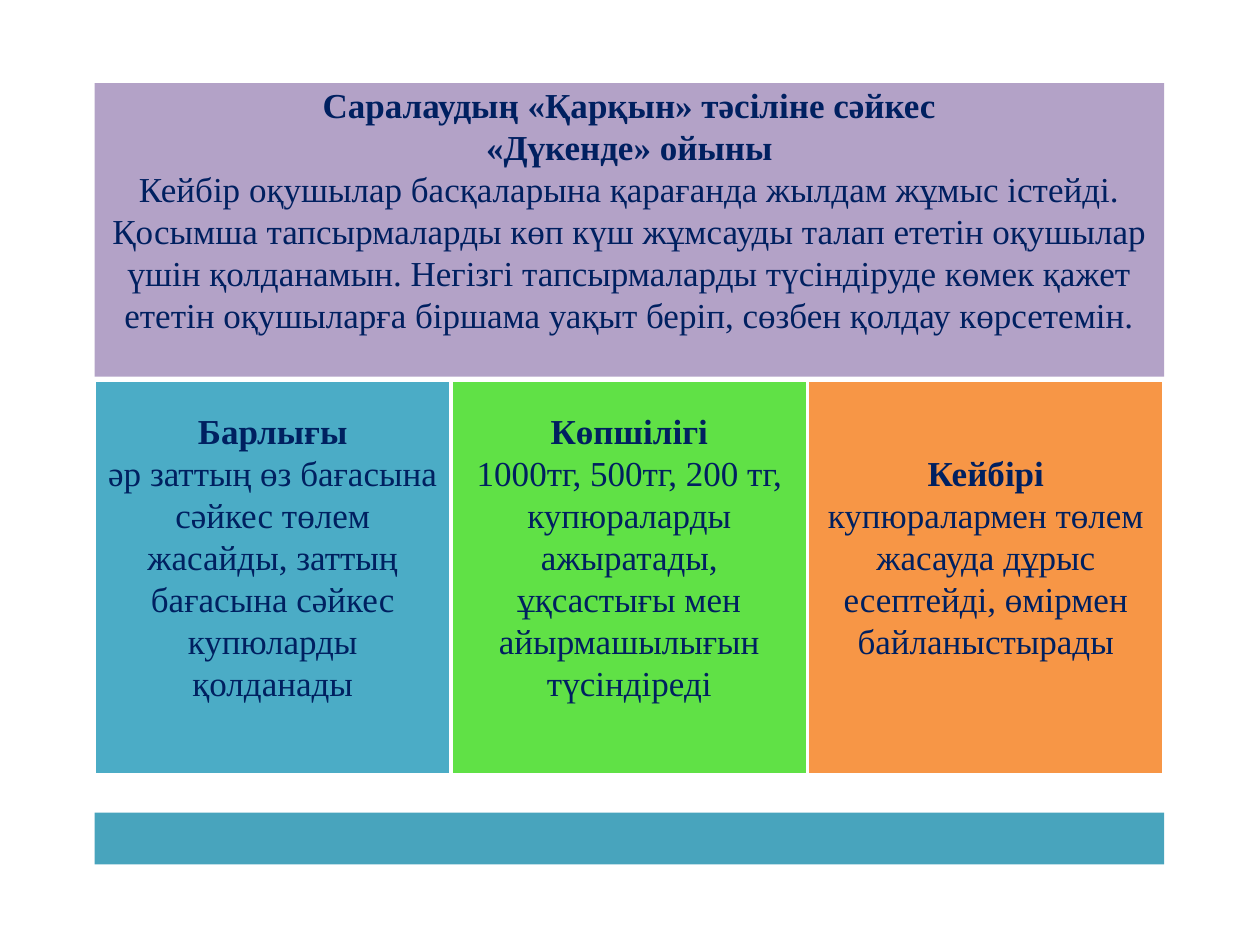
"""Build the slide on a differentiation method: a header panel, three pupil groups and a base bar."""
from dataclasses import dataclass

from pptx import Presentation
from pptx.dml.color import RGBColor
from pptx.enum.shapes import MSO_SHAPE
from pptx.enum.text import MSO_ANCHOR, MSO_AUTO_SIZE, PP_ALIGN
from pptx.util import Inches, Pt

HEADINGS = ["Саралаудың «Қарқын» тәсіліне сәйкес", "«Дүкенде» ойыны"]
EXPLANATION = (
    "Кейбір оқушылар басқаларына қарағанда жылдам жұмыс істейді. "
    "Қосымша тапсырмаларды көп күш жұмсауды талап ететін оқушылар үшін қолданамын. "
    "Негізгі тапсырмаларды түсіндіруде көмек қажет ететін оқушыларға біршама уақыт беріп, "
    "сөзбен қолдау көрсетемін."
)
GROUPS = [
    ("Барлығы", "әр заттың өз бағасына сәйкес төлем жасайды, "
     "заттың бағасына сәйкес купюларды қолданады", "4BACC6"),
    ("Көпшілігі", "1000тг, 500тг, 200 тг, купюраларды ажыратады, "
     "ұқсастығы мен айырмашылығын түсіндіреді", "60E146"),
    ("Кейбірі", "купюралармен төлем жасауда дұрыс есептейді, "
     "өмірмен байланыстырады", "F79646"),
]


@dataclass(frozen=True)
class Theme:
    font: str = "Times New Roman"
    size: int = 20
    ink: str = "002060"
    header: str = "B3A2C7"
    base: str = "48A4BD"
    border: str = "FFFFFF"
    border_width: int = 2
    side_inset: float = 0.08
    bottom_inset: float = 0.33


THEME = Theme()
SLIDE_WIDTH, SLIDE_HEIGHT = 10, 7.5
LEFT, WIDTH = 0.75, 8.49
HEADER_TOP, HEADER_HEIGHT = 0.66, 2.33
GROUP_TOP, GROUP_HEIGHT = 3.02, 3.13
BASE_TOP, BASE_HEIGHT = 6.45, 0.41


def place(panel, left, top, width, height, fill):
    panel.left, panel.top = Inches(left), Inches(top)
    panel.width, panel.height = Inches(width), Inches(height)
    panel.fill.solid()
    panel.fill.fore_color.rgb = RGBColor.from_string(fill)
    panel.line.fill.background()


def add_panel(slide, left, top, width, height, fill):
    panel = slide.shapes.add_shape(MSO_SHAPE.RECTANGLE, 0, 0, 0, 0)
    panel.shadow.inherit = False
    place(panel, left, top, width, height, fill)
    return panel


def write(panel, headings, body):
    frame = panel.text_frame
    frame.text = "\n".join([*headings, body])
    frame.word_wrap = True
    frame.auto_size = MSO_AUTO_SIZE.NONE
    frame.vertical_anchor = MSO_ANCHOR.MIDDLE
    frame.margin_left = frame.margin_right = Inches(THEME.side_inset)
    frame.margin_top, frame.margin_bottom = 0, Inches(THEME.bottom_inset)
    for index, paragraph in enumerate(frame.paragraphs):
        paragraph.alignment = PP_ALIGN.CENTER
        for run in paragraph.runs:
            run.font.name = THEME.font
            run.font.size = Pt(THEME.size)
            run.font.bold = index < len(headings)
            run.font.color.rgb = RGBColor.from_string(THEME.ink)


def main():
    deck = Presentation()
    deck.slide_width, deck.slide_height = Inches(SLIDE_WIDTH), Inches(SLIDE_HEIGHT)
    slide = deck.slides.add_slide(deck.slide_layouts.get_by_name("Title Only"))

    header = slide.shapes.title
    place(header, LEFT, HEADER_TOP, WIDTH, HEADER_HEIGHT, THEME.header)
    write(header, HEADINGS, EXPLANATION)

    group_width = WIDTH / len(GROUPS)
    for column, (heading, task, fill) in enumerate(GROUPS):
        group = add_panel(slide, LEFT + column * group_width, GROUP_TOP,
                          group_width, GROUP_HEIGHT, fill)
        group.line.color.rgb = RGBColor.from_string(THEME.border)
        group.line.width = Pt(THEME.border_width)
        write(group, [heading], task)

    add_panel(slide, LEFT, BASE_TOP, WIDTH, BASE_HEIGHT, THEME.base)
    deck.save("out.pptx")


if __name__ == "__main__":
    main()
